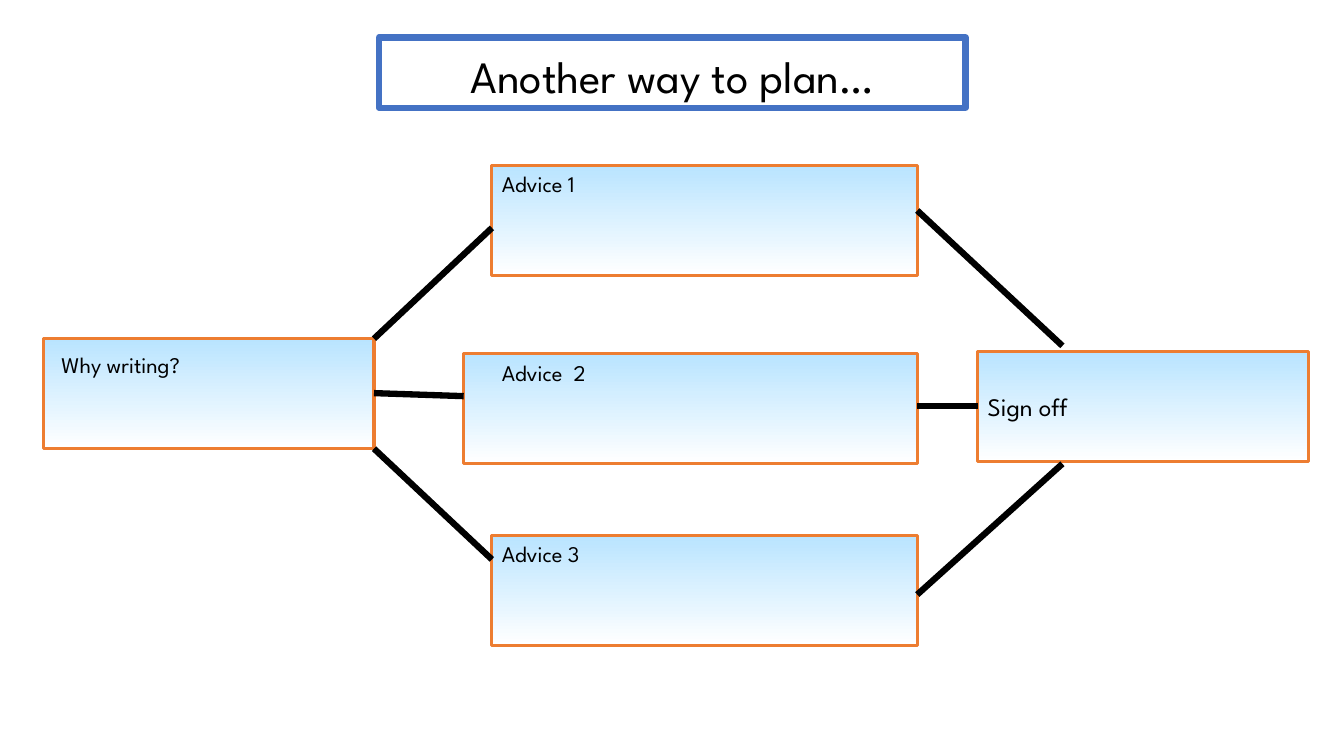
from dataclasses import dataclass

import lxml.etree
import pptx
import pptx.dml.color
import pptx.enum.shapes
import pptx.enum.text
import pptx.oxml.ns
import pptx.util

RGBColor = pptx.dml.color.RGBColor
Align = pptx.enum.text.PP_ALIGN
Anchor = pptx.enum.text.MSO_ANCHOR

BLACK = RGBColor(0x00, 0x00, 0x00)
WHITE = RGBColor(0xFF, 0xFF, 0xFF)
SKY = RGBColor(0xB9, 0xE4, 0xFF)
ORANGE = RGBColor(0xED, 0x7D, 0x31)
BLUE = RGBColor(0x44, 0x72, 0xC4)
FONT = "League Spartan"

# The slide is a grid of 100 columns by 100 rows.
WIDTH = pptx.util.Inches(13.33)
HEIGHT = pptx.util.Inches(7.5)
BOX_ROWS = 14.55
LABEL_ROWS = 4.95
SIDE_COLUMNS = 24.6
WHY_LEFT, WHY_TOP = 3.23, 44.8
WHY_RIGHT = WHY_LEFT + SIDE_COLUMNS
ADVICE_LEFT, ADVICE_RIGHT = 36.6, 68.25
WIDE_ADVICE_LEFT = 34.5
SIGN_OFF_LEFT, SIGN_OFF_TOP = 72.75, 46.55
SIGN_OFF_JOIN = 79.05


@dataclass(frozen=True)
class Area:
    left: float
    top: float
    columns: float
    rows: float = BOX_ROWS


@dataclass(frozen=True)
class Step:
    """A gradient box with its label, which starts at its own place."""
    box: Area
    label: str
    label_area: Area


@dataclass(frozen=True)
class Link:
    start: tuple[float, float]
    end: tuple[float, float]


def advice(number_text: str, top: float, left: float = ADVICE_LEFT) -> Step:
    columns = ADVICE_RIGHT - ADVICE_LEFT
    return Step(Area(left, top, ADVICE_RIGHT - left), number_text,
                Area(ADVICE_LEFT, top, columns, LABEL_ROWS))


TITLE = Area(28.2, 4.95, 43.65, 9.3)
SIGN_OFF = Area(SIGN_OFF_LEFT, SIGN_OFF_TOP, SIDE_COLUMNS)
STEPS = [
    Step(Area(WHY_LEFT, WHY_TOP, SIDE_COLUMNS), "Why writing?",
         Area(3.83, 45.85, 23.4, LABEL_ROWS)),
    advice("Advice 1", 21.85),
    advice("Advice  2", 46.8, WIDE_ADVICE_LEFT),
    advice("Advice 3", 70.8),
]
LINKS = [
    Link((WHY_RIGHT, WHY_TOP), (ADVICE_LEFT, 30.15)),
    Link((WHY_RIGHT, 52), (WIDE_ADVICE_LEFT, 52.4)),
    Link((WHY_RIGHT, WHY_TOP + BOX_ROWS), (ADVICE_LEFT, 74)),
    Link((ADVICE_RIGHT, 27.85), (SIGN_OFF_JOIN, 45.75)),
    Link((ADVICE_RIGHT, 53.75), (SIGN_OFF_LEFT, 53.75)),
    Link((ADVICE_RIGHT, 78.65), (SIGN_OFF_JOIN, 61.35)),
]


def across(columns: float) -> int:
    return round(WIDTH * columns / 100)


def down(rows: float) -> int:
    return round(HEIGHT * rows / 100)


def frame(area: Area) -> tuple[int, int, int, int]:
    """Left, top, width and height of an area in slide units."""
    return (across(area.left), down(area.top),
            across(area.columns), down(area.rows))


def write(shape: pptx.shapes.autoshape.Shape, text: str, *, size: float = 16,
          align: Align = Align.LEFT, anchor: Anchor = Anchor.TOP,
          wrap: bool = True, line_spacing: float = 1.0) -> None:
    text_frame = shape.text_frame
    text_frame.word_wrap = wrap
    text_frame.vertical_anchor = anchor
    paragraph = text_frame.paragraphs[0]
    paragraph.alignment = align
    paragraph.line_spacing = line_spacing
    run = paragraph.add_run()
    run.text = text
    run.font.name = FONT
    run.font.size = pptx.util.Pt(size)
    run.font.color.rgb = BLACK


def add_box(slide: pptx.slide.Slide, area: Area, line_color: RGBColor,
            line_width: float) -> pptx.shapes.autoshape.Shape:
    shape = slide.shapes.add_shape(
        pptx.enum.shapes.MSO_SHAPE.RECTANGLE, *frame(area))
    shape.shadow.inherit = False
    shape.line.color.rgb = line_color
    shape.line.width = pptx.util.Pt(line_width)
    return shape


def add_gradient_box(slide: pptx.slide.Slide,
                     area: Area) -> pptx.shapes.autoshape.Shape:
    shape = add_box(slide, area, ORANGE, 2.25)
    shape.fill.gradient()
    shape.fill.gradient_angle = 270
    for stop, color, position in zip(shape.fill.gradient_stops,
                                     (SKY, WHITE), (0, 1)):
        stop.color.rgb = color
        stop.position = position
    return shape


def add_step(slide: pptx.slide.Slide, step: Step) -> None:
    add_gradient_box(slide, step.box)
    write(slide.shapes.add_textbox(*frame(step.label_area)), step.label)


def add_link(slide: pptx.slide.Slide, link: Link) -> None:
    connector = slide.shapes.add_connector(
        pptx.enum.shapes.MSO_CONNECTOR.STRAIGHT,
        across(link.start[0]), down(link.start[1]),
        across(link.end[0]), down(link.end[1]))
    connector.line.color.rgb = BLACK
    connector.line.width = pptx.util.Pt(4.5)
    lxml.etree.SubElement(connector._element.spPr,
                          pptx.oxml.ns.qn("a:effectLst"))


def main() -> None:
    presentation = pptx.Presentation()
    presentation.slide_width = WIDTH
    presentation.slide_height = HEIGHT
    slide = presentation.slides.add_slide(presentation.slide_layouts[6])

    for step in STEPS:
        add_step(slide, step)

    title = add_box(slide, TITLE, BLUE, 4.5)
    title.fill.solid()
    title.fill.fore_color.rgb = WHITE
    write(title, "Another way to plan…", size=32, align=Align.CENTER,
          anchor=Anchor.BOTTOM, line_spacing=0.9)

    sign_off = add_gradient_box(slide, SIGN_OFF)
    write(sign_off, "Sign off", size=18, anchor=Anchor.MIDDLE, wrap=False)

    for link in LINKS:
        add_link(slide, link)
    presentation.save("out.pptx")


if __name__ == "__main__":
    main()
